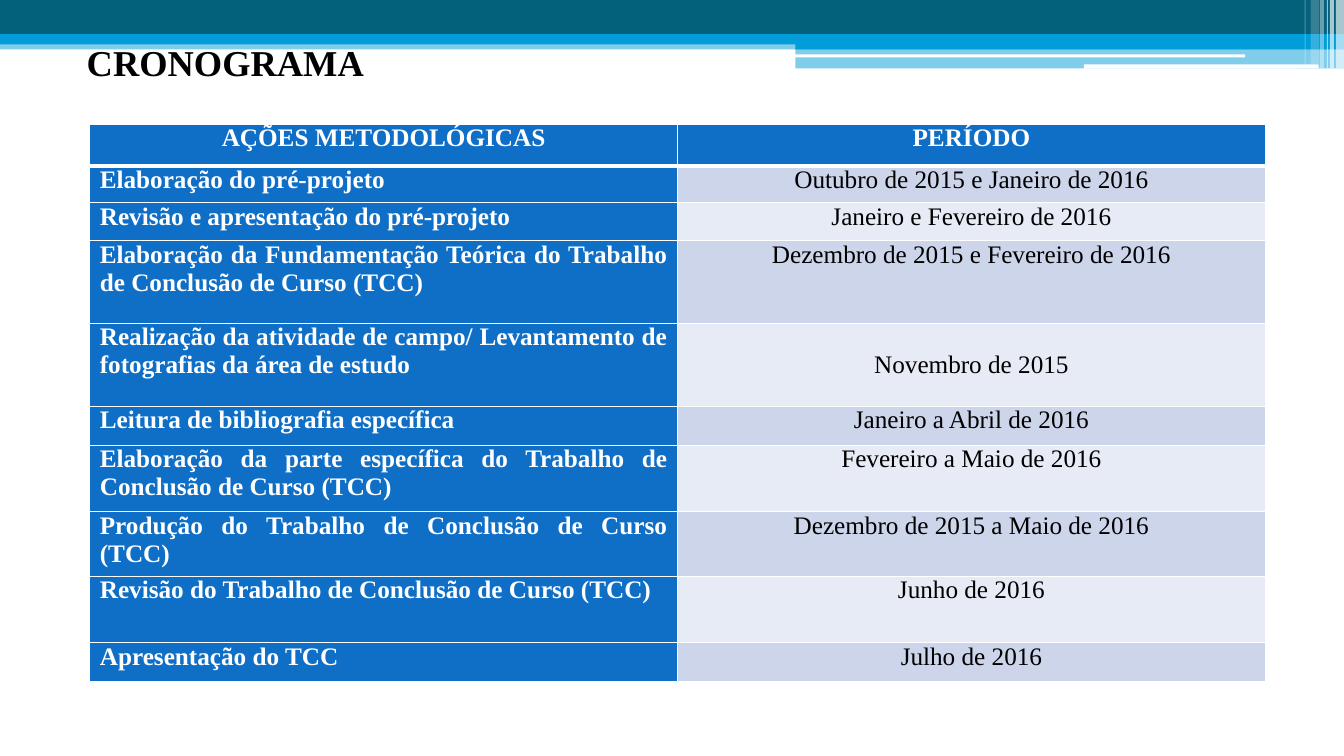
from dataclasses import dataclass

from lxml import etree
from pptx import Presentation
from pptx.dml.color import RGBColor
from pptx.enum.shapes import MSO_SHAPE
from pptx.enum.text import MSO_ANCHOR, PP_ALIGN
from pptx.oxml.ns import qn
from pptx.util import Inches, Pt

RECT, ROUNDED = MSO_SHAPE.RECTANGLE, MSO_SHAPE.ROUNDED_RECTANGLE
LEFT, CENTER, JUSTIFY = PP_ALIGN.LEFT, PP_ALIGN.CENTER, PP_ALIGN.JUSTIFY
TOP, MIDDLE = MSO_ANCHOR.TOP, MSO_ANCHOR.MIDDLE
TITLE_ONLY = 5


@dataclass(frozen=True)
class Theme:
    font: str = "Times New Roman"
    title_size: int = 26
    table_size: int = 18
    black: str = "000000"
    white: str = "FFFFFF"
    teal: str = "04617B"
    cyan: str = "009DD9"
    blue: str = "0F6FC6"
    bands: tuple = ("CCD5EA", "E7EBF5")


THEME = Theme()

# left, top, width, height, colour, opacity in percent, shape
BANNER = [
    (0, 0.4, 13.33, 0.09, THEME.cyan, 50, RECT),
    (0, 0, 13.33, 0.34, THEME.teal, 100, RECT),
    (0, 0.34, 13.33, 0.1, THEME.cyan, 100, RECT),
    (7.89, 0.39, 5.44, 0.1, THEME.cyan, 100, RECT),
    (7.89, 0.48, 5.44, 0.2, THEME.cyan, 50, RECT),
    (7.88, 0.54, 4.47, 0.03, THEME.white, 100, ROUNDED),
    (10.75, 0.64, 2.33, 0.04, THEME.white, 100, ROUNDED),
]

# left, width, height, opacity in percent
STRIPES = [
    (13.25, 0.08, 0.68, 65),
    (13.19, 0.04, 0.68, 65),
    (13.16, 0.01, 0.68, 60),
    (13.09, 0.04, 0.68, 40),
    (13, 0.08, 0.64, 20),
    (12.94, 0.01, 0.64, 30),
]

HEADINGS = ("AÇÕES METODOLÓGICAS", "PERÍODO")
HEADING_HEIGHT = 0.42
COLUMN_WIDTH = 5.83

# action, period, row height, anchor of the period
SCHEDULE = [
    ("Elaboração do pré-projeto", "Outubro de 2015 e Janeiro de 2016", 0.36, TOP),
    ("Revisão e apresentação do pré-projeto", "Janeiro e Fevereiro de 2016", 0.38, TOP),
    ("Elaboração da Fundamentação Teórica do Trabalho de Conclusão de Curso (TCC)",
     "Dezembro de 2015 e Fevereiro de 2016", 0.82, TOP),
    ("Realização da atividade de campo/ Levantamento de fotografias da área de estudo",
     "Novembro de 2015", 0.82, MIDDLE),
    ("Leitura de bibliografia específica", "Janeiro a Abril de 2016", 0.39, TOP),
    ("Elaboração da parte específica do Trabalho de Conclusão de Curso (TCC)",
     "Fevereiro a Maio de 2016", 0.66, TOP),
    ("Produção do Trabalho de Conclusão de Curso (TCC)",
     "Dezembro de 2015 a Maio de 2016", 0.64, TOP),
    ("Revisão do Trabalho de Conclusão de Curso (TCC)", "Junho de 2016", 0.66, TOP),
    ("Apresentação do TCC", "Julho de 2016", 0.38, TOP),
]


def write(text_frame, text, size, color, bold, align):
    text_frame.text = text
    paragraph = text_frame.paragraphs[0]
    paragraph.alignment = align
    font = paragraph.runs[0].font
    font.name = THEME.font
    font.size = Pt(size)
    font.bold = bold
    font.color.rgb = RGBColor.from_string(color)


def add_bar(slide, left, top, width, height, color, opacity, kind=RECT):
    bar = slide.shapes.add_shape(
        kind, Inches(left), Inches(top), Inches(width), Inches(height))
    bar.shadow.inherit = False
    bar.line.fill.background()
    bar.fill.solid()
    bar.fill.fore_color.rgb = RGBColor.from_string(color)
    if opacity < 100:
        shade = bar.fill._xPr.find(f".//{qn('a:srgbClr')}")
        etree.SubElement(shade, qn("a:alpha"), val=str(opacity * 1000))


def add_title(slide, text):
    title = slide.shapes.title
    title.left, title.top = Inches(0.67), Inches(0)
    title.width, title.height = Inches(12), Inches(1.23)
    frame = title.text_frame
    frame.margin_left = Inches(0.19)
    frame.vertical_anchor = MIDDLE
    write(frame, text, THEME.title_size, THEME.black, True, LEFT)


def set_borders(cell, top, bottom):
    """Draw white borders; top and bottom are widths in points."""
    properties = cell._tc.get_or_add_tcPr()
    for side, width in (("L", 1), ("R", 1), ("T", top), ("B", bottom)):
        line = etree.SubElement(properties, qn(f"a:ln{side}"), w=str(Pt(width)))
        fill = etree.SubElement(line, qn("a:solidFill"))
        etree.SubElement(fill, qn("a:srgbClr"), val=THEME.white)


def fill_cell(cell, text, fill, color, bold, align, anchor=TOP, top=1, bottom=1):
    cell.margin_left = cell.margin_right = Inches(0.1)
    cell.margin_top = cell.margin_bottom = 0
    cell.vertical_anchor = anchor
    set_borders(cell, top, bottom)
    cell.fill.solid()
    cell.fill.fore_color.rgb = RGBColor.from_string(fill)
    write(cell.text_frame, text, THEME.table_size, color, bold, align)


def add_schedule(slide):
    heights = [HEADING_HEIGHT] + [height for _, _, height, _ in SCHEDULE]
    table = slide.shapes.add_table(
        len(heights), len(HEADINGS), Inches(0.89), Inches(1.23),
        Inches(COLUMN_WIDTH * len(HEADINGS)), Inches(sum(heights))).table
    for column in table.columns:
        column.width = Inches(COLUMN_WIDTH)
    for row, height in zip(table.rows, heights):
        row.height = Inches(height)

    for index, heading in enumerate(HEADINGS):
        fill_cell(table.cell(0, index), heading, THEME.blue, THEME.white, True,
                  CENTER, bottom=3)
    for index, (action, period, _, anchor) in enumerate(SCHEDULE):
        top = 3 if index == 0 else 1
        fill_cell(table.cell(index + 1, 0), action, THEME.blue, THEME.white, True,
                  JUSTIFY, top=top)
        fill_cell(table.cell(index + 1, 1), period, THEME.bands[index % 2],
                  THEME.black, False, CENTER, anchor, top)


def main():
    deck = Presentation()
    deck.slide_width, deck.slide_height = Inches(13.33), Inches(7.5)
    slide = deck.slides.add_slide(deck.slide_layouts[TITLE_ONLY])
    for bar in BANNER:
        add_bar(slide, *bar)
    for left, width, height, opacity in STRIPES:
        add_bar(slide, left, 0, width, height, THEME.white, opacity)
    add_title(slide, "CRONOGRAMA")
    add_schedule(slide)
    deck.save("out.pptx")


if __name__ == "__main__":
    main()
